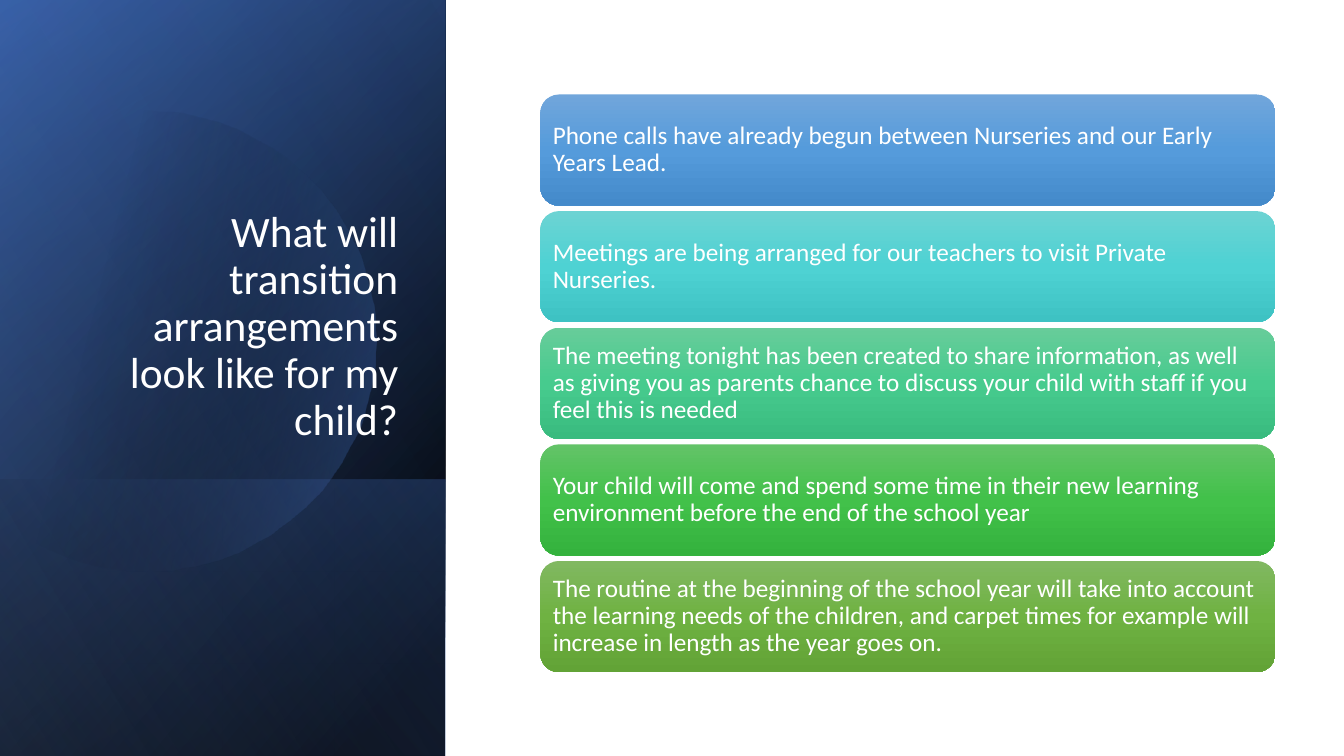
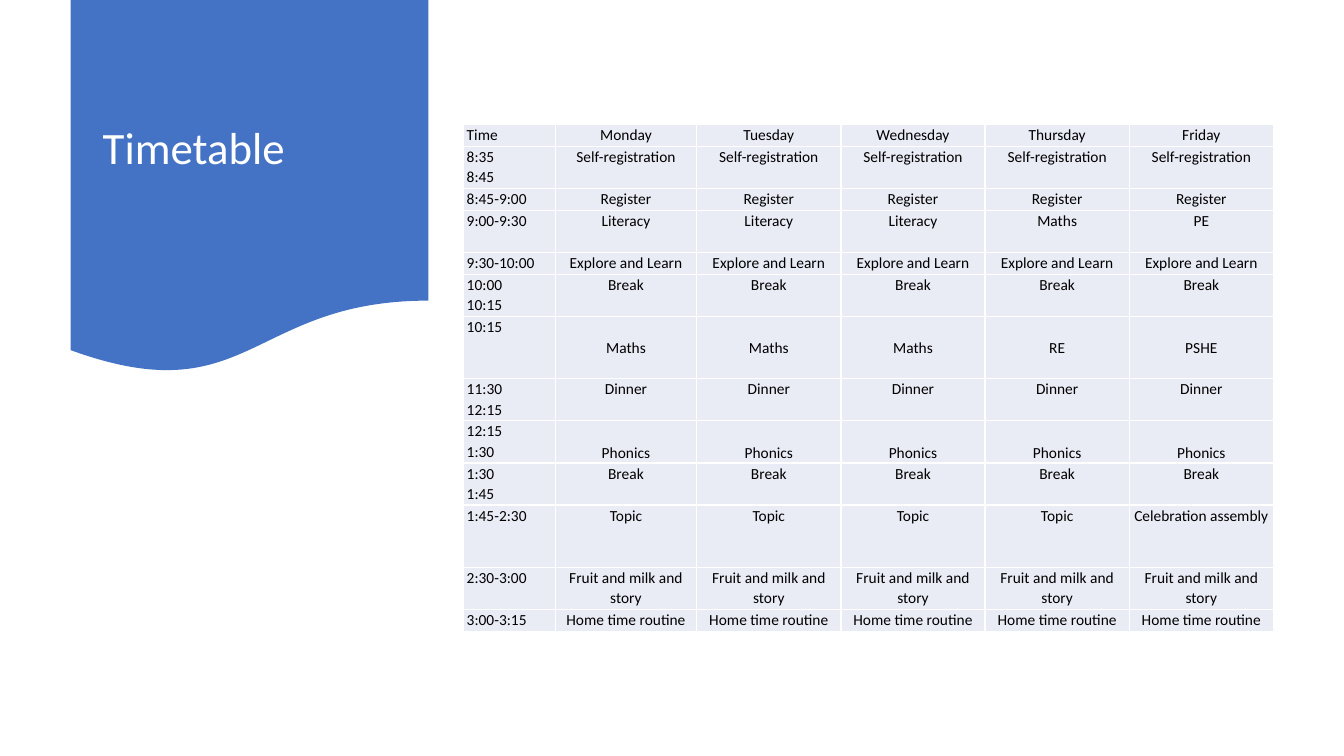
import math

from lxml import etree
from pptx import Presentation
from pptx import util as u
from pptx.dml import color
from pptx.enum import shapes, text
from pptx.oxml import ns

Pt = u.Pt
FONT = "Calibri"
WHITE, BLACK, BLUE, PALE = "FFFFFF", "000000", "4472C4", "E9EBF5"
SLIDE_WIDTH, SLIDE_HEIGHT = 960, 540
LEFT, CENTER, RIGHT = (
    text.PP_ALIGN.LEFT, text.PP_ALIGN.CENTER, text.PP_ALIGN.RIGHT)
TOP, MIDDLE, BOTTOM = (
    text.MSO_ANCHOR.TOP, text.MSO_ANCHOR.MIDDLE, text.MSO_ANCHOR.BOTTOM)

TITLE_STYLE = {"size": 32, "colour": WHITE, "spacing": 0.9}
CARD_STYLE = {"size": 18, "colour": WHITE, "spacing": 0.9}
CELL_STYLE = {"size": 11, "colour": BLACK, "spacing": 1.07}

PANEL_WIDTH = 318
BAND_TOP = 342.7
PANELS = [
    (0, SLIDE_HEIGHT, 50, [(8, BLACK, 100), (100, "2F5597", 100)]),
    (0, SLIDE_HEIGHT, 30, [(0, BLACK, 0), (99, BLUE, 46)]),
    (BAND_TOP, SLIDE_HEIGHT - BAND_TOP, 130,
     [(2, BLUE, 29), (100, BLACK, 30)]),
]
SHEEN = (0, SLIDE_HEIGHT, 120, [(0, BLACK, 0), (99, "8FAADC", 11)])

CARDS = [
    ("Phone calls have already begun between Nurseries and our Early Years "
     "Lead.", ("71A6DB", "559BDB", "448ACA")),
    ("Meetings are being arranged for our teachers to visit Private "
     "Nurseries.", ("6CD3D3", "4ED2D3", "3EC2C3")),
    ("The meeting tonight has been created to share information, as well as "
     "giving you as parents chance to discuss your child with staff if you "
     "feel this is needed", ("67CC9A", "47CB8E", "39BB7F")),
    ("Your child will come and spend some time in their new learning "
     "environment before the end of the school year",
     ("63C368", "42C14A", "34B23D")),
    ("The routine at the beginning of the school year will take into account "
     "the learning needs of the children, and carpet times for example will "
     "increase in length as the year goes on.",
     ("81B861", "6FB242", "62A336")),
]

COLUMN_WIDTHS = [65.6, 101.1, 103, 103, 103, 103]
DAYS = ["Monday", "Tuesday", "Wednesday", "Thursday", "Friday"]
TIMETABLE = [
    ("Time", DAYS, 1, TOP),
    ("8:35\n8:45", ["Self-registration"] * 5, 2, TOP),
    ("8:45-9:00", ["Register"] * 5, 1, TOP),
    ("9:00-9:30", ["Literacy"] * 3 + ["Maths", "PE"], 2, TOP),
    ("9:30-10:00", ["Explore and Learn"] * 5, 1, TOP),
    ("10:00\n10:15", ["Break"] * 5, 2, TOP),
    ("10:15", ["Maths"] * 3 + ["RE", "PSHE"], 3, MIDDLE),
    ("11:30\n12:15", ["Dinner"] * 5, 2, TOP),
    ("12:15\n1:30", ["Phonics"] * 5, 2, BOTTOM),
    ("1:30\n1:45", ["Break"] * 5, 2, TOP),
    ("1:45-2:30", ["Topic"] * 4 + ["Celebration assembly"], 3, TOP),
    ("2:30-3:00", ["Fruit and milk and story"] * 5, 2, TOP),
    ("3:00-3:15", ["Home time routine"] * 5, 1, TOP),
]


def rgb(value):
    """Return the colour for a hex string."""
    return color.RGBColor.from_string(value)


def set_attributes(target, values):
    """Set each named attribute of the target."""
    for name, value in values.items():
        setattr(target, name, value)


def add_element(parent, tag, **attributes):
    """Append a DrawingML element and return it."""
    element = etree.SubElement(parent, ns.qn(tag))
    for name, value in attributes.items():
        element.set(name, str(value))
    return element


def write_text(frame, words, style, align=LEFT):
    """Write one paragraph for each line of the words."""
    frame.text = words
    for paragraph in frame.paragraphs:
        set_attributes(paragraph, {
            "alignment": align, "line_spacing": style["spacing"],
            "space_before": Pt(0), "space_after": Pt(0)})
        set_attributes(paragraph.font, {
            "name": FONT, "size": Pt(style["size"])})
        paragraph.font.color.rgb = rgb(style["colour"])


def set_gradient(shape, angle, stops):
    """Fill a shape with a linear gradient of position, colour, opacity."""
    shape.fill.background()
    properties = shape._element.spPr
    placeholder = properties.find(ns.qn("a:noFill"))
    gradient = etree.Element(ns.qn("a:gradFill"), rotWithShape="1")
    stop_list = add_element(gradient, "a:gsLst")
    for position, colour, opacity in stops:
        stop = add_element(stop_list, "a:gs", pos=position * 1000)
        tint = add_element(stop, "a:srgbClr", val=colour)
        if opacity < 100:
            add_element(tint, "a:alpha", val=opacity * 1000)
    add_element(gradient, "a:lin", ang=angle * 60000, scaled=0)
    properties.replace(placeholder, gradient)


def make_plain(shape):
    """Take the shadow and outline off a shape."""
    shape.shadow.inherit = False
    shape.line.fill.background()
    return shape


def add_plain_shape(slide, kind, left, top, width, height):
    """Add a preset shape with no shadow or outline."""
    return make_plain(slide.shapes.add_shape(
        kind, Pt(left), Pt(top), Pt(width), Pt(height)))


def add_panel(slide, top, height, angle, stops):
    """Add a mirrored, quarter-turned gradient panel at the left edge."""
    shift = (PANEL_WIDTH - height) / 2
    panel = add_plain_shape(slide, shapes.MSO_SHAPE.RECTANGLE,
                            shift, top - shift, height, PANEL_WIDTH)
    panel.rotation = 90
    panel._element.spPr.xfrm.set("flipH", "1")
    set_gradient(panel, angle, stops)


def add_cut_circle(slide, center_x, center_y, radius):
    """Add a circle cut off by the left edge of the slide."""
    limit = math.acos(-center_x / radius)
    steps = 90
    angles = [limit * (2 * step / steps - 1) for step in range(steps + 1)]
    points = [(center_x + radius * math.cos(angle),
               center_y + radius * math.sin(angle)) for angle in angles]
    builder = slide.shapes.build_freeform(*points[0], scale=Pt(1))
    builder.add_line_segments(points[1:], close=True)
    circle = make_plain(builder.convert_to_shape())
    set_gradient(circle, 14, [(29, BLACK, 0), (100, BLUE, 43)])


def add_card(slide, top, words, colours):
    """Add a rounded gradient card with its text."""
    card = add_plain_shape(slide, shapes.MSO_SHAPE.ROUNDED_RECTANGLE,
                           386, top, 525, 79.4)
    set_gradient(card, 90, [(position, colour, 100) for position, colour
                            in zip((0, 50, 100), colours)])
    frame = card.text_frame
    set_attributes(frame, {
        "word_wrap": True, "vertical_anchor": MIDDLE,
        "margin_left": Pt(5), "margin_right": Pt(5),
        "margin_top": Pt(5), "margin_bottom": Pt(5)})
    write_text(frame, words, CARD_STYLE)


def place_title(slide, words, box, anchor, align=LEFT, size=32):
    """Move the title to the front, then place and format it."""
    title = slide.shapes.title
    slide.shapes._spTree.append(title._element)
    names = ("left", "top", "width", "height")
    set_attributes(title, dict(zip(names, map(Pt, box))))
    set_attributes(title.text_frame, {
        "word_wrap": True, "auto_size": text.MSO_AUTO_SIZE.NONE,
        "vertical_anchor": anchor})
    write_text(title.text_frame, words, {**TITLE_STYLE, "size": size}, align)


def format_cell(cell, words, align, anchor):
    """Write a timetable cell with white borders and a pale fill."""
    set_attributes(cell, {
        "margin_left": Pt(2.4), "margin_right": Pt(2.4),
        "margin_top": Pt(0), "margin_bottom": Pt(0),
        "vertical_anchor": anchor})
    write_text(cell.text_frame, words, CELL_STYLE, align)
    properties = cell._tc.get_or_add_tcPr()
    for side in ("a:lnL", "a:lnR", "a:lnT", "a:lnB"):
        border = add_element(properties, side, w=Pt(1))
        add_element(add_element(border, "a:solidFill"),
                    "a:srgbClr", val=WHITE)
    cell.fill.solid()
    cell.fill.fore_color.rgb = rgb(PALE)


def add_timetable(slide):
    """Add the weekly timetable."""
    heights = [15.7 + 14.4 * (lines - 1) for _, _, lines, _ in TIMETABLE]
    table = slide.shapes.add_table(
        len(TIMETABLE), len(COLUMN_WIDTHS), Pt(331), Pt(88.8),
        Pt(sum(COLUMN_WIDTHS)), Pt(sum(heights))).table
    set_attributes(table, {"first_row": False, "horz_banding": False})
    for column, width in zip(table.columns, COLUMN_WIDTHS):
        column.width = Pt(width)
    for row, height, (time, activities, _, anchor) in zip(
            table.rows, heights, TIMETABLE):
        row.height = Pt(height)
        format_cell(row.cells[0], time, LEFT, TOP)
        for day, activity in enumerate(activities, 1):
            format_cell(row.cells[day], activity, CENTER, anchor)


def build_transition(slide):
    """Build the slide on transition arrangements."""
    for panel in PANELS:
        add_panel(slide, *panel)
    add_cut_circle(slide, 104.4, 243.4, 164.2)
    add_panel(slide, *SHEEN)
    place_title(slide,
                "What will transition arrangements look like for my child?",
                (46, 132.5, 245.5, 188.6), BOTTOM, RIGHT, 31)
    for index, (words, colours) in enumerate(CARDS):
        add_card(slide, 67.5 + 83.3 * index, words, colours)


def build_timetable(slide):
    """Build the timetable slide."""
    banner = add_plain_shape(slide, shapes.MSO_SHAPE.FLOWCHART_DOCUMENT,
                             50.4, 0, 255.6, 267.8)
    banner.fill.solid()
    banner.fill.fore_color.rgb = rgb(BLUE)
    place_title(slide, "Timetable", (66.2, 13.7, 224, 186.5), MIDDLE)
    add_timetable(slide)


def main():
    """Build and save the presentation."""
    presentation = Presentation()
    set_attributes(presentation, {
        "slide_width": Pt(SLIDE_WIDTH), "slide_height": Pt(SLIDE_HEIGHT)})
    title_only = presentation.slide_layouts[5]
    for build in (build_transition, build_timetable):
        build(presentation.slides.add_slide(title_only))
    presentation.save("out.pptx")


if __name__ == "__main__":
    main()
